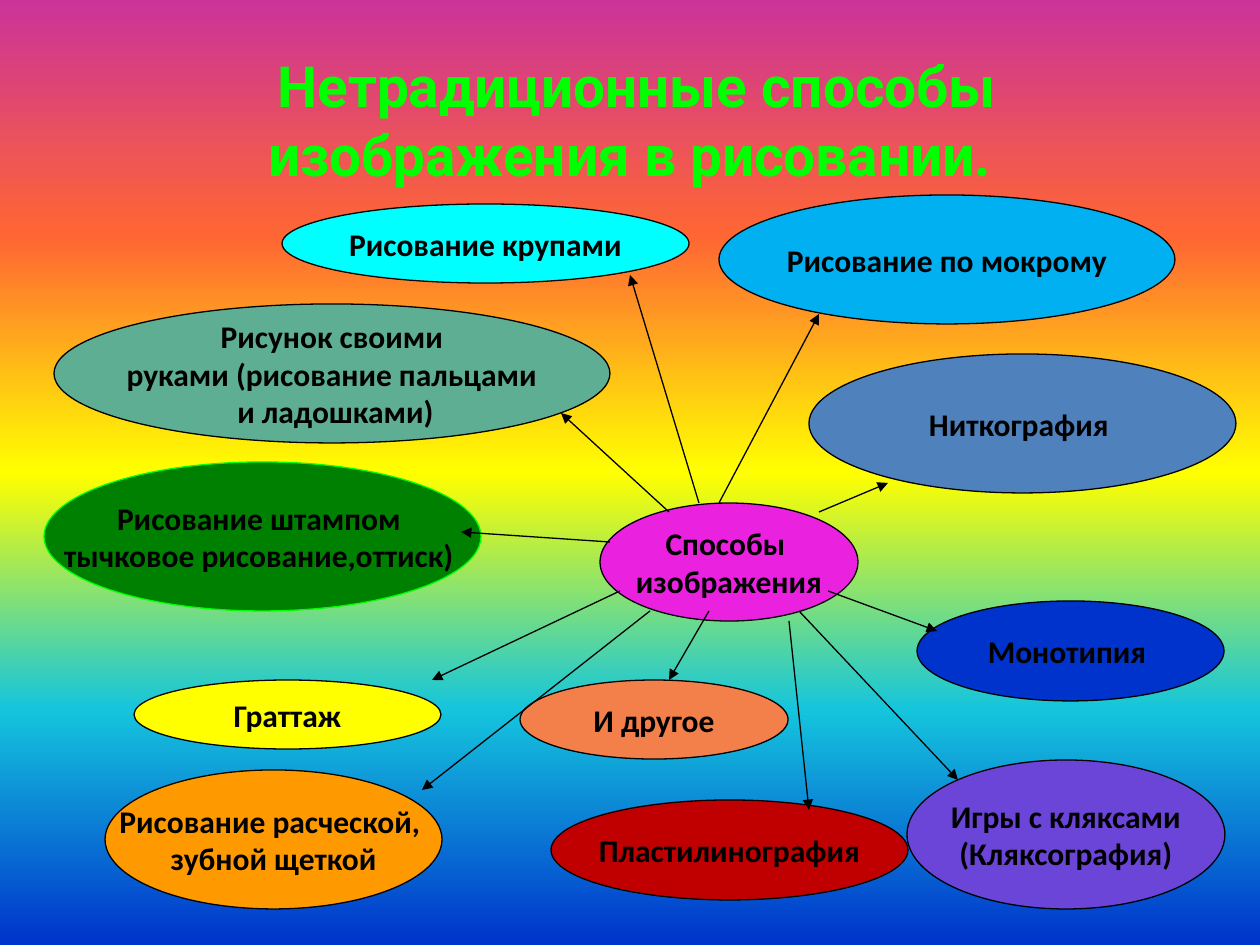
from lxml.etree import SubElement as Sub
from pptx import Presentation
from pptx.dml.color import RGBColor as RGB
from pptx.enum.shapes import MSO_CONNECTOR as CONN, MSO_SHAPE as SHAPE
from pptx.enum.text import MSO_ANCHOR as ANCHOR, MSO_AUTO_SIZE as AUTO, PP_ALIGN as ALIGN
from pptx.oxml.ns import qn
from pptx.util import Emu, Pt

PX = 914400 / 126
COLORS = {
    "black": "000000", "lime": "00FF00", "magenta": "EA22E0",
    "sage": "5EAE93", "sky": "00B0F0", "steel": "4F81BD",
    "green": "008000", "blue": "0033CC", "coral": "F37F4B",
    "yellow": "FFFF00", "violet": "6B44D8", "orange": "FF9900",
    "cyan": "00FFFF", "red": "C00000",
}
BACKGROUND = ["CC3399", "FF6633", "FFFF00", "15C5DD", "0033CC"]
CENTER = (600, 503, 258, 118)
METHODS = [
    (["Рисунок своими", "руками (рисование пальцами", " и ладошками)"],
     (54, 304, 556, 139), "sage", (669, 512, 561, 413)),
    (["Рисование по мокрому"], (719, 195, 456, 129), "sky", (719, 503, 819, 314)),
    (["Ниткография "], (809, 354, 427, 139), "steel", (819, 512, 888, 483)),
    (["Рисование штампом ", "тычковое рисование,оттиск) "],
     (44, 462, 437, 149), "green", (610, 542, 461, 532)),
    (["Монотипия "], (917, 601, 307, 100), "blue", (828, 591, 937, 631)),
    (["И другое"], (520, 680, 268, 79), "coral", (709, 611, 669, 680)),
    (["Граттаж"], (134, 680, 307, 69), "yellow", (620, 591, 432, 680)),
    (["Игры с кляксами", "(Кляксография)"],
     (907, 760, 318, 149), "violet", (799, 611, 958, 780)),
    (["Рисование расческой, ", "зубной щеткой"],
     (105, 770, 337, 139), "orange", (650, 611, 422, 790)),
    (["Рисование крупами"], (282, 204, 407, 79), "cyan", (699, 503, 630, 275)),
    (["Пластилинография"], (551, 800, 357, 100), "red", (789, 621, 809, 810)),
]
BODY_METHOD = "Рисование крупами"


def emu(*values):
    return [Emu(round(v * PX)) for v in values]


def add_text(p, text, size=18, font="Calibri", color="black"):
    r = p.add_run()
    r.text = text
    r.font.size = Pt(size)
    r.font.name = font
    r.font.bold = True
    r.font.color.rgb = RGB.from_string(COLORS[color])


def place(sp, box):
    sp.left, sp.top, sp.width, sp.height = emu(*box)


def set_background(slide):
    fill = slide.background.fill
    fill.gradient()
    fill.gradient_angle = 270
    stops = slide.element.find(".//" + qn("a:gsLst"))
    stops.clear()
    for i, color in enumerate(BACKGROUND):
        gs = Sub(stops, qn("a:gs"), pos=str(i * 25000))
        Sub(gs, qn("a:srgbClr"), val=color)


def add_title(sp, box):
    place(sp, box)
    tf = sp.text_frame
    tf.word_wrap = True
    tf.auto_size = AUTO.NONE
    tf.vertical_anchor = ANCHOR.MIDDLE
    p = tf.paragraphs[0]
    p.alignment = ALIGN.CENTER
    add_text(p, " ", size=36)
    add_text(p, "Нетрадиционные способы изображения в рисовании.",
             size=32.4, font="Roboto", color="lime")


def format_oval(sp, lines, fill, line="black"):
    sp.fill.solid()
    sp.fill.fore_color.rgb = RGB.from_string(COLORS[fill])
    sp.line.color.rgb = RGB.from_string(COLORS[line])
    sp.line.width = Pt(0.75)
    tf = sp.text_frame
    tf.auto_size = AUTO.NONE
    tf.word_wrap = False
    tf.vertical_anchor = ANCHOR.MIDDLE
    for i, text in enumerate(lines):
        p = tf.add_paragraph() if i else tf.paragraphs[0]
        p.alignment = ALIGN.CENTER
        add_text(p, text)


def add_oval(slide, box, lines, fill, line="black"):
    sp = slide.shapes.add_shape(SHAPE.OVAL, *emu(*box))
    sp.shadow.inherit = False
    format_oval(sp, lines, fill, line)


def add_body_oval(sp, box, lines, fill):
    place(sp, box)
    geom = Sub(sp.element.spPr, qn("a:prstGeom"), prst="ellipse")
    Sub(geom, qn("a:avLst"))
    format_oval(sp, lines, fill)
    p = sp.text_frame.paragraphs[0]
    p.space_before = Pt(0)
    pPr = p._p.get_or_add_pPr()
    pPr.set("marL", "0")
    pPr.set("indent", "0")
    Sub(pPr, qn("a:buNone"))


def add_arrow(slide, ends):
    cx = slide.shapes.add_connector(CONN.STRAIGHT, *emu(*ends))
    cx.line.color.rgb = RGB.from_string(COLORS["black"])
    cx.line.width = Pt(0.75)
    Sub(cx.line._get_or_add_ln(), qn("a:tailEnd"), type="triangle")
    Sub(cx.element.spPr, qn("a:effectLst"))


def add_method_map(slide, body):
    add_oval(slide, CENTER, ["Способы ", "изображения"], "magenta")
    for lines, box, fill, _ in METHODS:
        if lines[0] == BODY_METHOD:
            add_body_oval(body, box, lines, fill)
        else:
            add_oval(slide, box, lines, fill, "lime" if fill == "green" else "black")
    for *_, ends in METHODS:
        add_arrow(slide, ends)


def main():
    prs = Presentation()
    prs.slide_width, prs.slide_height = emu(1260, 945)
    slide = prs.slides.add_slide(prs.slide_layouts[1])
    set_background(slide)
    add_title(slide.shapes.title, (63, 38, 1134, 157))
    add_method_map(slide, slide.placeholders[1])
    prs.save("out.pptx")


if __name__ == "__main__":
    main()
